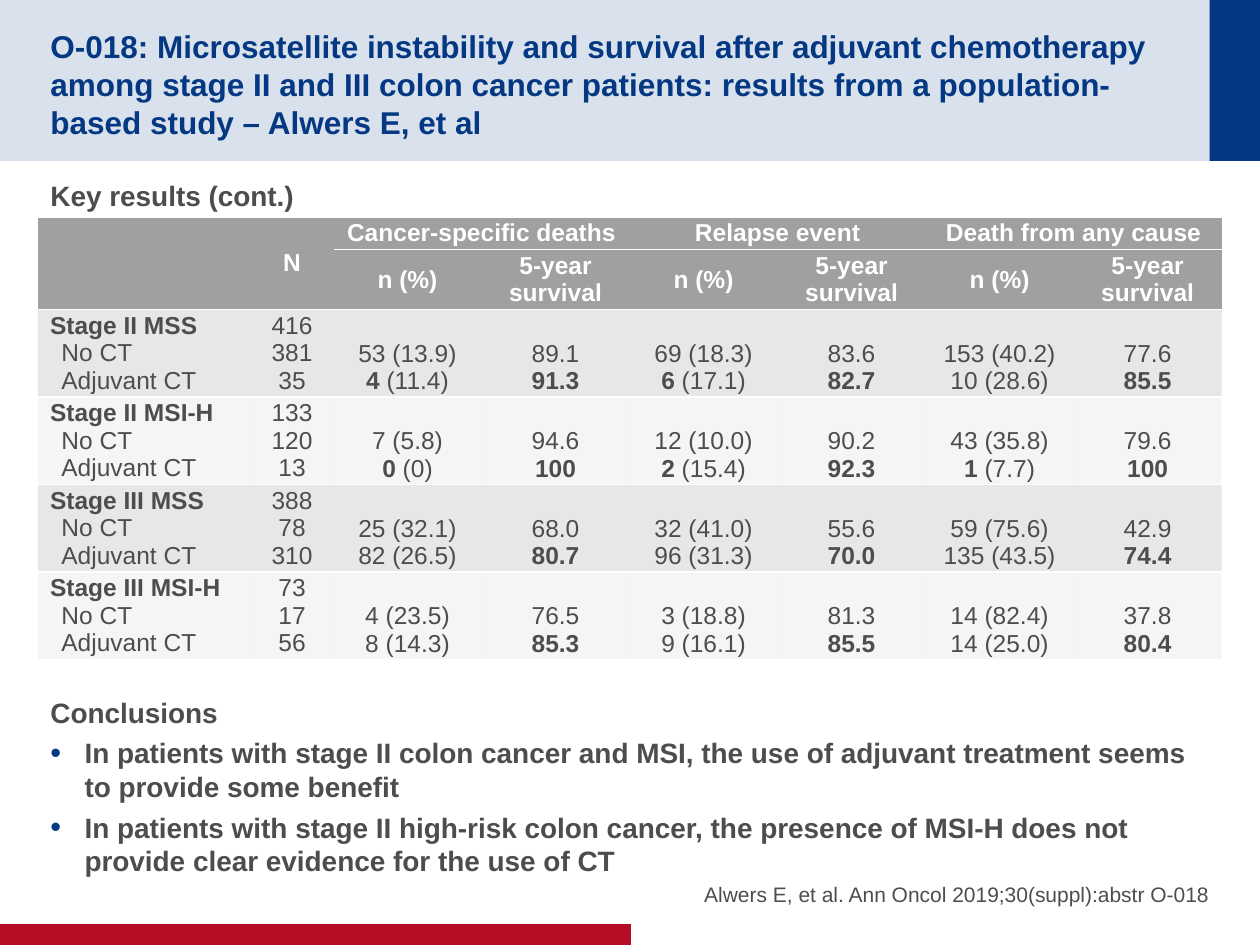
from dataclasses import dataclass

import pptx
import pptx.dml.color
import pptx.enum.shapes
import pptx.enum.text
import pptx.oxml
import pptx.oxml.ns
import pptx.shapes.base
import pptx.slide
import pptx.table
import pptx.text.text
import pptx.util

Pt = pptx.util.Pt
RGBColor = pptx.dml.color.RGBColor
Align = pptx.enum.text.PP_ALIGN
Anchor = pptx.enum.text.MSO_ANCHOR
qn = pptx.oxml.ns.qn

NAVY = RGBColor(0x04, 0x38, 0x82)
RED = RGBColor(0xB6, 0x0D, 0x27)
GREY = RGBColor(0xA0, 0xA0, 0xA0)
TEXT = RGBColor(0x4D, 0x4D, 0x4D)
WHITE = RGBColor(0xFF, 0xFF, 0xFF)
FONT = "Arial"
NO_STYLE = "{2D5ABB26-0587-4C30-8999-92F81FD0307C}"
TABLE_SIZE = 14
LABEL_INDENT = 6.5
BULLET_INDENT = 19.5


@dataclass(frozen=True)
class Band:
    left: float
    top: float
    width: float
    height: float
    color: RGBColor
    opacity: int = 100


@dataclass(frozen=True)
class Outcome:
    """Events and 5-year survival; text between asterisks is bold."""
    no_ct: str
    adjuvant: str
    no_ct_survival: str
    adjuvant_survival: str


@dataclass(frozen=True)
class StageGroup:
    name: str
    counts: tuple[str, str, str]
    outcomes: tuple[Outcome, Outcome, Outcome]


BANDS = (
    Band(0, 0, 720, 92, NAVY, 15),
    Band(691.2, 0, 28.8, 92, NAVY),
    Band(0, 528, 360.5, 12, RED),
)
TITLE = ("O-018: Microsatellite instability and survival after adjuvant chemotherapy among "
         "stage II and III colon cancer patients: results from a population-based study "
         "– Alwers E, et al")
CONCLUSIONS = (
    "In patients with stage II colon cancer and MSI, the use of adjuvant treatment seems "
    "to provide some benefit",
    "In patients with stage II high-risk colon cancer, the presence of MSI-H does not "
    "provide clear evidence for the use of CT",
)
CITATION = "Alwers E, et al. Ann Oncol 2019;30(suppl):abstr O-018"
OUTCOME_NAMES = ("Cancer-specific deaths", "Relapse event", "Death from any cause")
GROUPS = (
    StageGroup("Stage II MSS", ("416", "381", "35"), (
        Outcome("53 (13.9)", "*4* (11.4)", "89.1", "91.3"),
        Outcome("69 (18.3)", "*6* (17.1)", "83.6", "82.7"),
        Outcome("153 (40.2)", "10 (28.6)", "77.6", "85.5"))),
    StageGroup("Stage II MSI-H", ("133", "120", "13"), (
        Outcome("7 (5.8)", "*0* (0)", "94.6", "100"),
        Outcome("12 (10.0)", "*2* (15.4)", "90.2", "92.3"),
        Outcome("43 (35.8)", "*1* (7.7)", "79.6", "100"))),
    StageGroup("Stage III MSS", ("388", "78", "310"), (
        Outcome("25 (32.1)", "82 (26.5)", "68.0", "80.7"),
        Outcome("32 (41.0)", "96 (31.3)", "55.6", "70.0"),
        Outcome("59 (75.6)", "135 (43.5)", "42.9", "74.4"))),
    StageGroup("Stage III MSI-H", ("73", "17", "56"), (
        Outcome("4 (23.5)", "8 (14.3)", "76.5", "85.3"),
        Outcome("3 (18.8)", "9 (16.1)", "81.3", "85.5"),
        Outcome("14 (82.4)", "14 (25.0)", "37.8", "80.4"))),
)


def set_values(target: object, values: dict) -> None:
    for key, value in values.items():
        setattr(target, key, value)


def set_solid(fill, element, color: RGBColor, opacity: int = 100) -> None:
    fill.solid()
    fill.fore_color.rgb = color
    if opacity < 100:
        rgb = next(element.iter(qn("a:srgbClr")))
        rgb.append(pptx.oxml.parse_xml(
            f'<a:alpha {pptx.oxml.ns.nsdecls("a")} val="{opacity * 1000}"/>'))


def draw_band(slide: pptx.slide.Slide, band: Band, layer: int) -> None:
    """Draw a band behind the placeholders."""
    shape = slide.shapes.add_shape(
        pptx.enum.shapes.MSO_SHAPE.RECTANGLE,
        Pt(band.left), Pt(band.top), Pt(band.width), Pt(band.height))
    set_solid(shape.fill, shape.element, band.color, band.opacity)
    shape.line.fill.background()
    shape.shadow.inherit = False
    slide.shapes.element.insert(2 + layer, shape.element)


def write(frame: pptx.text.text.TextFrame, lines: tuple[str, ...], size: float,
          color: RGBColor, bold: bool = False, **layout) -> None:
    """Write one paragraph a line; asterisks switch bold on and off."""
    for number, line in enumerate(lines):
        paragraph = frame.paragraphs[0] if number == 0 else frame.add_paragraph()
        set_values(paragraph, {"space_before": Pt(0), "space_after": Pt(0), **layout})
        for position, part in enumerate(line.split("*")):
            if part:
                run = paragraph.add_run()
                run.text = part
                set_values(run.font, {"name": FONT, "size": Pt(size),
                                      "bold": bold or position % 2 == 1})
                run.font.color.rgb = color


def set_indent(paragraph, left: float, first: float = 0, bullet: bool = False) -> None:
    properties = paragraph._p.get_or_add_pPr()
    properties.set("marL", str(Pt(left)))
    properties.set("indent", str(Pt(first)))
    marks = (f'<a:buClr><a:srgbClr val="{NAVY}"/></a:buClr><a:buSzPct val="110000"/>'
             f'<a:buFont typeface="{FONT}"/><a:buChar char="•"/>' if bullet else "<a:buNone/>")
    properties.extend(pptx.oxml.parse_xml(
        f'<a:pPr {pptx.oxml.ns.nsdecls("a")}>{marks}</a:pPr>'))


def place(holder: pptx.shapes.base.BaseShape, left: float, top: float, width: float,
          height: float, anchor: Anchor, inset_top: float,
          inset_bottom: float) -> pptx.text.text.TextFrame:
    set_values(holder, {"left": Pt(left), "top": Pt(top),
                        "width": Pt(width), "height": Pt(height)})
    set_values(holder.text_frame, {
        "margin_left": 0, "margin_right": 0, "margin_top": Pt(inset_top),
        "margin_bottom": Pt(inset_bottom), "word_wrap": True,
        "vertical_anchor": anchor, "auto_size": pptx.enum.text.MSO_AUTO_SIZE.NONE})
    return holder.text_frame


def style_cell(cell: pptx.table._Cell, opacity: int) -> None:
    set_values(cell, {"margin_left": Pt(7), "margin_right": Pt(7), "margin_top": Pt(1.2),
                      "margin_bottom": Pt(1.2), "vertical_anchor": Anchor.MIDDLE})
    properties = cell._tc.get_or_add_tcPr()
    set_solid(cell.fill, properties, GREY, opacity)
    if not cell.is_spanned:
        for order, side in enumerate(("lnT", "lnB")):
            properties.insert(order, pptx.oxml.parse_xml(
                f'<a:{side} {pptx.oxml.ns.nsdecls("a")} w="{Pt(1)}"><a:solidFill>'
                f'<a:srgbClr val="{WHITE}"/></a:solidFill></a:{side}>'))


def draw_results(slide: pptx.slide.Slide) -> None:
    widths = [121.6, 47.4] + [84.6] * 6
    heights = [18.6, 34.3] + [50] * len(GROUPS)
    frame = slide.shapes.add_table(len(heights), len(widths), Pt(21.6), Pt(124),
                                   Pt(sum(widths)), Pt(sum(heights)))
    next(frame.element.iter(qn("a:tableStyleId"))).text = NO_STYLE
    table = frame.table
    for column, width in zip(table.columns, widths):
        column.width = Pt(width)
    for row, height in zip(table.rows, heights):
        row.height = Pt(height)

    for column in (0, 1):
        table.cell(0, column).merge(table.cell(1, column))
    header = {(0, 1): "N"}
    for number, name in enumerate(OUTCOME_NAMES):
        column = 2 + 2 * number
        table.cell(0, column).merge(table.cell(0, column + 1))
        header |= {(0, column): name, (1, column): "n (%)", (1, column + 1): "5-year survival"}
    for row in range(len(heights)):
        for column in range(len(widths)):
            style_cell(table.cell(row, column), 100 if row < 2 else (25, 10)[row % 2])
    for position, label in header.items():
        write(table.cell(*position).text_frame, (label,), TABLE_SIZE, WHITE, True,
              alignment=Align.CENTER)

    for row, group in enumerate(GROUPS, start=2):
        labels = table.cell(row, 0).text_frame
        write(labels, (f"*{group.name}*", "No CT", "Adjuvant CT"), TABLE_SIZE, TEXT)
        for paragraph in labels.paragraphs[1:]:
            set_indent(paragraph, LABEL_INDENT)
        columns = [group.counts]
        for outcome in group.outcomes:
            columns += [(outcome.no_ct, outcome.adjuvant),
                        (outcome.no_ct_survival, f"*{outcome.adjuvant_survival}*")]
        for column, lines in enumerate(columns, start=1):
            cell = table.cell(row, column)
            cell.vertical_anchor = Anchor.BOTTOM if len(lines) == 2 else Anchor.MIDDLE
            write(cell.text_frame, lines, TABLE_SIZE, TEXT, alignment=Align.CENTER)


def main() -> None:
    deck = pptx.Presentation()
    set_values(deck, {"slide_width": Pt(720), "slide_height": Pt(540)})
    slide = deck.slides.add_slide(deck.slide_layouts.get_by_name("Two Content"))
    title, body, citation = slide.placeholders
    for layer, band in enumerate(BANDS):
        draw_band(slide, band, layer)

    write(place(title, 28.8, 14.4, 648.7, 63.4, Anchor.MIDDLE, 3.6, 0),
          (TITLE,), 18, NAVY, True, alignment=Align.LEFT)

    findings = place(body, 28.8, 98.6, 662.4, 373.7, Anchor.TOP, 3.6, 3.6)
    write(findings, ("Key results (cont.)", "Conclusions", *CONCLUSIONS), 16, TEXT, True,
          space_after=Pt(4))
    findings.paragraphs[1].space_before = Pt(272)
    for paragraph in findings.paragraphs[:2]:
        set_indent(paragraph, 0)
    for paragraph in findings.paragraphs[2:]:
        set_indent(paragraph, BULLET_INDENT, -BULLET_INDENT, bullet=True)

    source = place(citation, 354.2, 480.2, 337, 38.2, Anchor.BOTTOM, 0, 0)
    write(source, (CITATION,), 12, TEXT, alignment=Align.RIGHT, space_after=Pt(4))
    set_indent(source.paragraphs[0], 0)

    draw_results(slide)
    deck.save("out.pptx")


if __name__ == "__main__":
    main()
